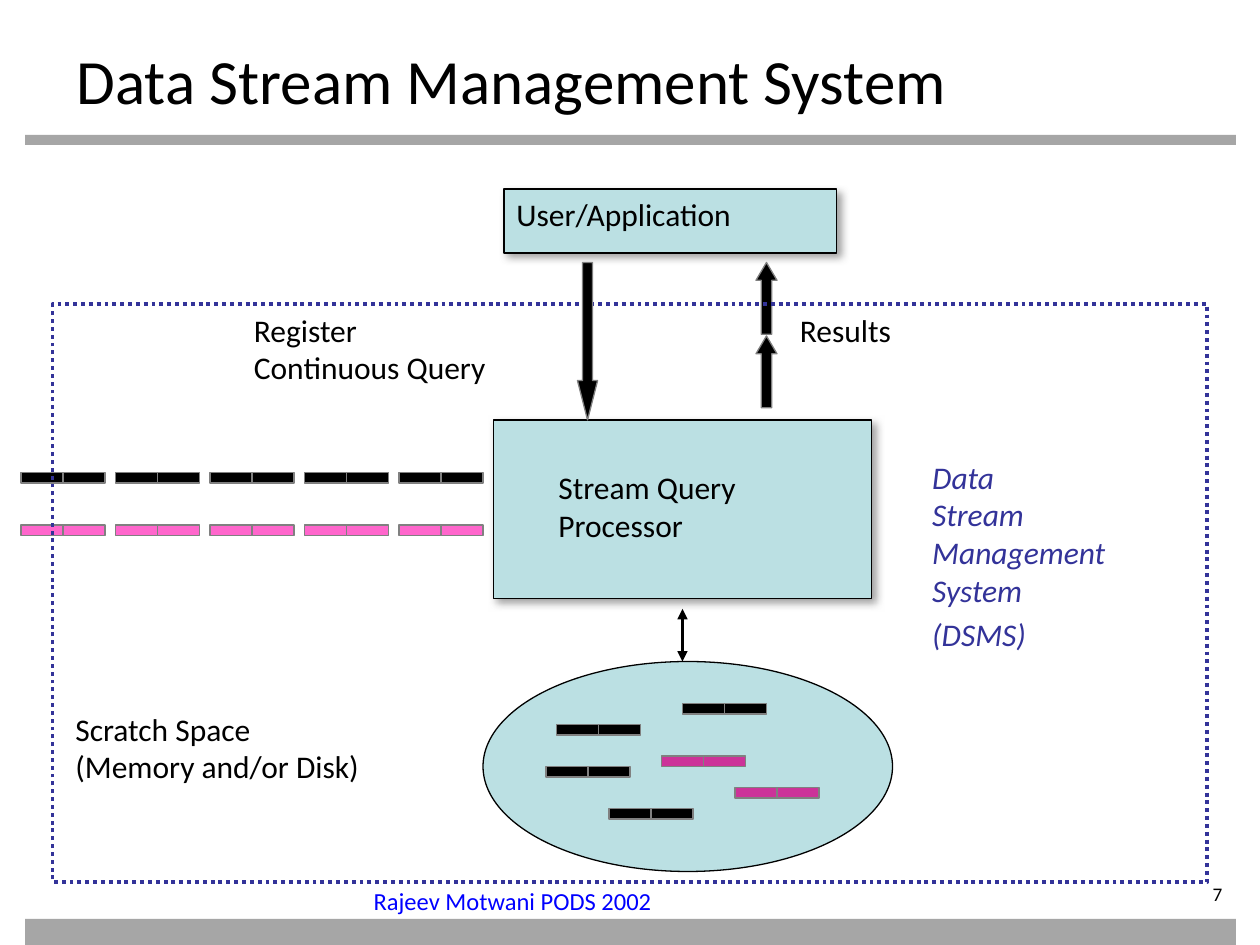
from dataclasses import dataclass

from lxml.etree import SubElement
from pptx import Presentation
from pptx.dml.color import RGBColor
from pptx.enum.dml import MSO_LINE_DASH_STYLE as Dash
from pptx.enum.shapes import MSO_CONNECTOR as Conn, MSO_SHAPE as Geo
from pptx.enum.text import MSO_ANCHOR as Anchor, PP_ALIGN as Align
from pptx.oxml.ns import qn
from pptx.util import Inches, Pt

COLS, ROWS = 120, 90
BLACK, GRAY, BAR = "000000", "808080", "A6A6A6"
TEAL, PINK, MAGENTA = "BBE0E3", "FF66CC", "CC3399"
INDIGO, BLUE = "333399", "0000FF"

prs = Presentation()
prs.slide_width, prs.slide_height = Inches(10), Inches(7.5)
s = prs.slides.add_slide(prs.slide_layouts[6])


@dataclass
class Area:
    """A rectangle in grid columns and rows."""
    col: float
    row: float
    cols: float
    rows: float

    def emu(self) -> list[int]:
        w, h = prs.slide_width / COLS, prs.slide_height / ROWS
        return [round(v) for v in
                (self.col * w, self.row * h, self.cols * w, self.rows * h)]


@dataclass
class Label:
    area: Area
    lines: list[str]
    size: int = 18
    color: str = BLACK
    italic: bool = False
    align: Align = Align.LEFT
    margins: tuple = (0.1, 0.05, 0.1, 0.05)


@dataclass
class Token:
    """A stream element made of two joined cells."""
    col: float
    row: float
    color: str


def rgb(color: str) -> RGBColor:
    return RGBColor.from_string(color)


def add_box(area: Area, fill: str | None = None, line: str | None = None,
            geo: Geo = Geo.RECTANGLE, width: float = 0.75, parent=s):
    sp = parent.shapes.add_shape(geo, *area.emu())
    sp.shadow.inherit = False
    if fill:
        sp.fill.solid()
        sp.fill.fore_color.rgb = rgb(fill)
    else:
        sp.fill.background()
    if line:
        sp.line.color.rgb = rgb(line)
        sp.line.width = Pt(width)
    else:
        sp.line.fill.background()
    return sp


def add_shadow(sp) -> None:
    effects = sp._element.spPr.find(qn("a:effectLst"))
    shadow = SubElement(effects, qn("a:outerShdw"), blurRad=str(Pt(5)),
                        dist=str(Pt(3)), dir=str(45 * 60000))
    color = SubElement(shadow, qn("a:srgbClr"), val=GRAY)
    SubElement(color, qn("a:alpha"), val="75000")


def add_arrow(area: Area, geo: Geo, head: float) -> None:
    sp = add_box(area, BLACK, GRAY, geo)
    sp.adjustments[0], sp.adjustments[1] = 0.5, head


def add_token(token: Token, parent) -> None:
    for half in range(2):
        add_box(Area(token.col + 4 * half, token.row, 4, 1),
                token.color, GRAY, parent=parent)


def add_tokens(tokens: list[Token]) -> None:
    group = s.shapes.add_group_shape()
    for token in tokens:
        add_token(token, group)


def add_label(label: Label):
    tb = s.shapes.add_textbox(*label.area.emu())
    tf = tb.text_frame
    sides = ("margin_left", "margin_top", "margin_right", "margin_bottom")
    frame = dict(zip(sides, map(Inches, label.margins)),
                 word_wrap=True, vertical_anchor=Anchor.TOP)
    for name, value in frame.items():
        setattr(tf, name, value)
    font = {"name": "Calibri", "size": Pt(label.size), "italic": label.italic}
    for i, line in enumerate(label.lines):
        p = tf.paragraphs[0] if i == 0 else tf.add_paragraph()
        p.alignment = label.align
        p.text = line
        for r in p.runs:
            for name, value in font.items():
                setattr(r.font, name, value)
            r.font.color.rgb = rgb(label.color)
    return tb


def add_double_arrow(col: float, top: float, bottom: float) -> None:
    x, y, _, h = Area(col, top, 0, bottom - top).emu()
    cn = s.shapes.add_connector(Conn.STRAIGHT, x, y + h, x, y)
    cn.line.color.rgb = rgb(BLACK)
    cn.line.width = Pt(1.5)
    for end in ("a:headEnd", "a:tailEnd"):
        SubElement(cn.line._get_or_add_ln(), qn(end), type="triangle")
    SubElement(cn._element.spPr, qn("a:effectLst"))


def main() -> None:
    # Page furniture
    for row, rows in ((12.84, 0.96), (87.5, 2.5)):
        add_box(Area(2.4, row, 115.3, rows), BAR)
    add_label(Label(Area(104.4, 84, 13.2, 2.64), ["7"], 11,
                    align=Align.RIGHT, margins=(0, 0, 0.1, 0)))
    add_label(Label(Area(6.12, 3.36, 108, 6.6),
                    ["Data Stream Management System"], 36))

    # User and query processor
    user = Area(48, 18, 31.7, 6.1)
    for area in (user, Area(47, 40, 36, 17)):
        add_shadow(add_box(area, TEAL, BLACK))
    add_label(Label(user, ["User/Application"]))
    add_label(Label(Area(23, 29, 30.4, 8.5), ["Register \vContinuous Query"]))
    add_label(Label(Area(52, 44, 27.4, 10.8), ["Stream Query", "Processor"]))
    add_label(Label(Area(75, 29, 17, 6), ["Results"]))
    for row in (25, 32):
        add_arrow(Area(72, row, 2, 6.84), Geo.UP_ARROW, 0.85)

    # Incoming streams
    add_tokens([Token(2 + 9 * i, row, color)
                for row, color in ((45, BLACK), (50, PINK))
                for i in range(5)])

    # Scratch space
    add_label(Label(Area(6, 67, 41, 10.8),
                    ["Scratch Space", "(Memory and/or Disk)"]))
    add_box(Area(46, 63, 39, 20), TEAL, BLACK, Geo.OVAL)
    for token in (Token(70, 75, MAGENTA), Token(58, 77, BLACK),
                  Token(52, 73, BLACK), Token(63, 72, MAGENTA),
                  Token(53, 69, BLACK), Token(65, 67, BLACK)):
        add_tokens([token])

    # System boundary
    frame = add_box(Area(5, 29, 110, 55), line=INDIGO, width=2.25)
    frame.line.dash_style = Dash.ROUND_DOT
    system = add_label(Label(
        Area(87.6, 43, 25.8, 26.2),
        ["Data", "Stream", "Management", "System", "(DSMS)"],
        color=INDIGO, italic=True))
    system.text_frame.paragraphs[3].space_after = Pt(3.6)

    add_arrow(Area(55, 25, 1.92, 15), Geo.DOWN_ARROW, 1.96)
    add_double_arrow(65, 58, 63)
    add_label(Label(Area(34.4, 83.8, 42.5, 6),
                    ["Rajeev Motwani PODS 2002"], 14, BLUE))
    prs.save("out.pptx")


if __name__ == "__main__":
    main()
